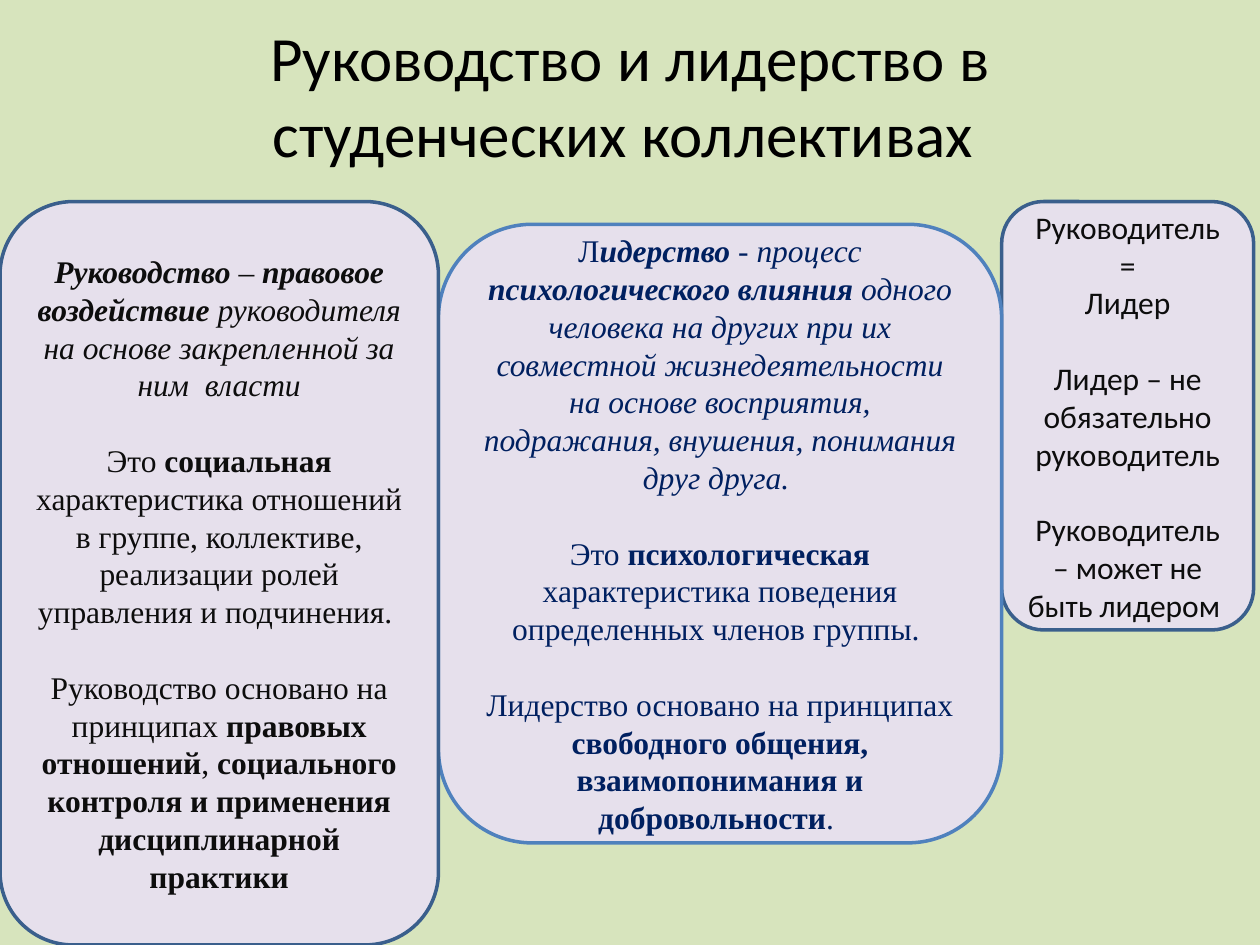
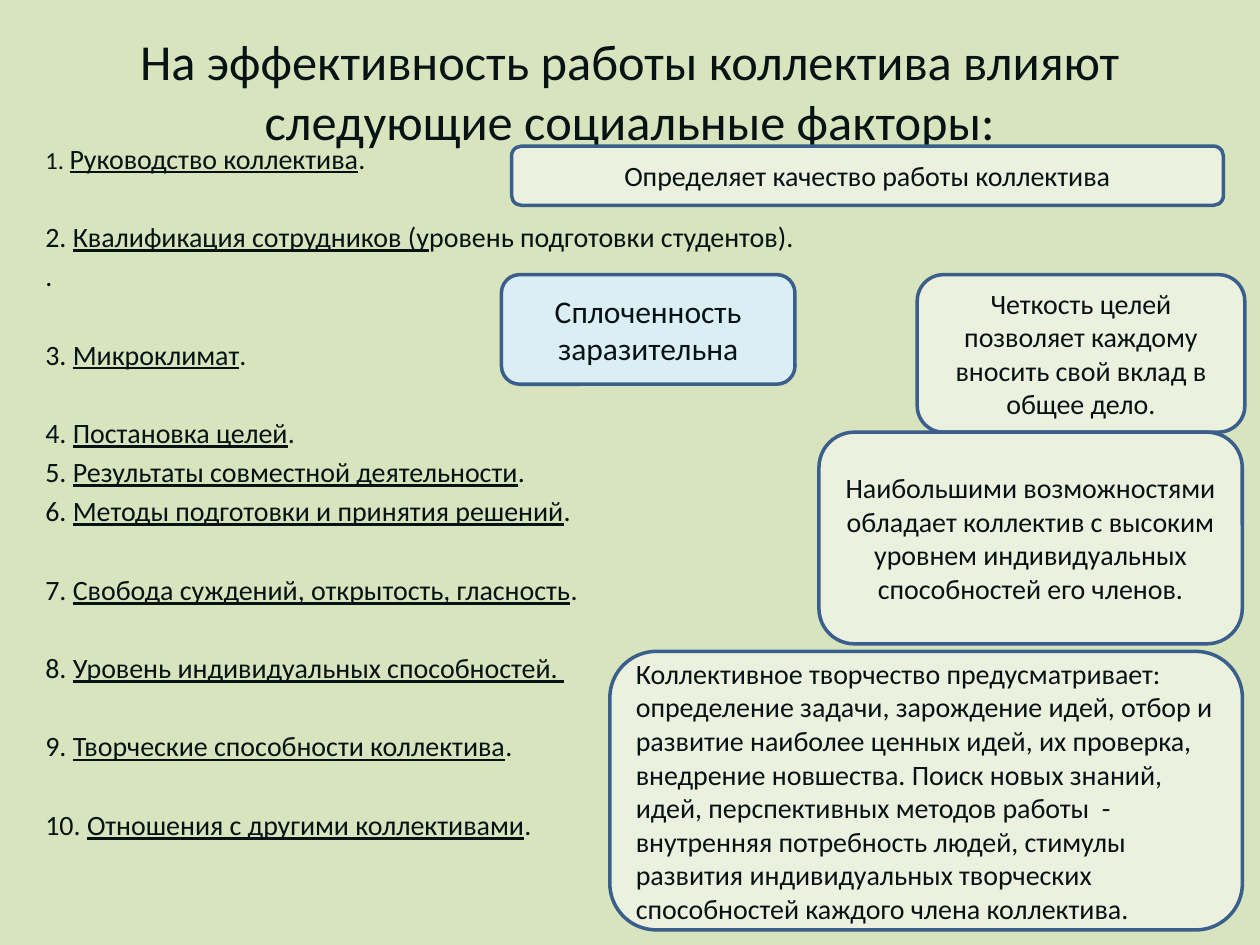
from collections import namedtuple

import pptx
import pptx.dml.color
import pptx.enum.shapes
import pptx.enum.text
import pptx.util

Box = namedtuple("Box", "left top width height")
Style = namedtuple("Style", "size color font align", defaults=("Calibri", "CENTER"))

COLUMNS, ROWS = 100, 75
SLIDE_WIDTH, SLIDE_HEIGHT = pptx.util.Inches(10), pptx.util.Inches(7.5)
LEADING = 1.2
BACKGROUND = "D7E4BD"
LILAC, IVORY, SKY = "E6E0EC", "EBF1DE", "DBEEF4"
OUTLINE, BRIGHT_OUTLINE = "3A5F8C", "4F81BD"
BLACK, CHARCOAL, NAVY, INK = "000000", "0D0D0D", "002060", "071215"
SERIF = "Times New Roman"

MANAGEMENT = [
    [("bi", "Руководство "), ("i", "– "), ("bi", "правовое воздействие"),
     ("i", " руководителя на основе закрепленной за ним  власти")],
    [("", "Это "), ("b", "социальная"),
     ("", " характеристика отношений в группе, коллективе, реализации ролей управления и подчинения. ")],
    [("", "Руководство основано на принципах "), ("b", "правовых отношений"), ("", ", "),
     ("b", "социального контроля и применения дисциплинарной практики")],
]
LEADERSHIP = [
    [("", "Л"), ("bi", "идерство "), ("i", "- процесс "), ("bi", "психологического влияния"),
     ("i", " одного человека на других при их совместной жизнедеятельности на основе восприятия, "
           "подражания, внушения, понимания друг друга. ")],
    [("", "Это "), ("b", "психологическая"),
     ("", " характеристика поведения определенных членов группы. ")],
    [("", "Лидерство основано на принципах "),
     ("b", "свободного общения, взаимопонимания и добровольности"), ("", ". ")],
]
COMPARISON = [
    [("", "Руководитель =")],
    [("", "Лидер")],
    [("", "Лидер – не обязательно руководитель")],
    [("", "Руководитель – может не быть лидером ")],
]
FACTORS = [
    ("Руководство коллектива", "."),
    ("Квалификация сотрудников (у", "ровень подготовки студентов)."),
    ("Микроклимат", "."),
    ("Постановка целей", "."),
    ("Результаты совместной деятельности", "."),
    ("Методы подготовки и принятия решений", "."),
    ("Свобода суждений, открытость, гласность", "."),
    ("Уровень индивидуальных способностей. ", " "),
    ("Творческие способности коллектива", "."),
    ("Отношения с другими коллективами", "."),
]
UNSPACED_FACTORS = {1, 5, 6}


def color(value):
    return pptx.dml.color.RGBColor.from_string(value)


def within(box, left, top, width, height):
    return Box(box.left + left, box.top + top, width, height)


def place(shape, box):
    shape.left = round(box.left * SLIDE_WIDTH / COLUMNS)
    shape.top = round(box.top * SLIDE_HEIGHT / ROWS)
    shape.width = round(box.width * SLIDE_WIDTH / COLUMNS)
    shape.height = round(box.height * SLIDE_HEIGHT / ROWS)


def write(shape, paragraphs, style, spaces, anchor="MIDDLE"):
    frame = shape.text_frame
    frame.word_wrap = True
    frame.auto_size = pptx.enum.text.MSO_AUTO_SIZE.NONE
    frame.vertical_anchor = getattr(pptx.enum.text.MSO_ANCHOR, anchor)
    for index, (runs, space) in enumerate(zip(paragraphs, spaces)):
        paragraph = frame.add_paragraph() if index else frame.paragraphs[0]
        paragraph.alignment = getattr(pptx.enum.text.PP_ALIGN, style.align)
        paragraph.line_spacing = pptx.util.Pt(style.size * LEADING)
        paragraph.space_before = pptx.util.Pt(space)
        for flags, text in runs:
            run = paragraph.add_run()
            run.text = text
            run.font.name = style.font
            run.font.size = pptx.util.Pt(style.size)
            run.font.color.rgb = color(style.color)
            run.font.bold = "b" in flags
            run.font.italic = "i" in flags
            run.font.underline = "u" in flags


def add_title(slide, box, text, style):
    place(slide.shapes.title, box)
    write(slide.shapes.title, [[("", text)]], style, [0])


def add_card(slide, box, paragraphs, style, fill, outline=OUTLINE, spaces=(0,)):
    kind = pptx.enum.shapes.MSO_SHAPE.ROUNDED_RECTANGLE
    card = slide.shapes.add_shape(kind, 0, 0, 0, 0)
    place(card, box)
    card.shadow.inherit = False
    card.fill.solid()
    card.fill.fore_color.rgb = color(fill)
    card.line.color.rgb = color(outline)
    card.line.width = pptx.util.Pt(2)
    write(card, paragraphs, style, spaces)


def add_definitions(slide, box):
    gap = 18 * LEADING
    add_card(slide, within(box, 79.5, 0, 20, 34), COMPARISON,
             Style(18, CHARCOAL), LILAC, spaces=(0, 0, gap, gap))
    add_card(slide, within(box, 34.8, 1.8, 44.7, 49.1), LEADERSHIP,
             Style(18, NAVY, SERIF), LILAC, BRIGHT_OUTLINE, (0, gap, gap))
    add_card(slide, within(box, 0, 0, 34.8, box.height), MANAGEMENT,
             Style(18, CHARCOAL, SERIF), LILAC, spaces=(0, gap, gap))


def add_factor_list(slide, box):
    style = Style(16, INK, align="LEFT")
    tight = 0.2 * style.size
    loose = 2 * tight + style.size * LEADING
    paragraphs, spaces = [], []
    for number, (factor, ending) in enumerate(FACTORS, 1):
        paragraphs.append([("", f"{number}. "), ("u", factor), ("", ending)])
        spaces.append(tight if number in UNSPACED_FACTORS else loose)
    paragraphs.insert(2, [("", ".")])
    spaces.insert(2, tight)
    body = slide.placeholders[1]
    place(body, box)
    write(body, paragraphs, style, spaces, "TOP")
    for paragraph in body.text_frame.paragraphs:
        properties = paragraph._p.get_or_add_pPr()
        properties.set("marL", "0")
        properties.set("indent", "0")
        bullet = properties.makeelement(pptx.oxml.ns.qn("a:buNone"), {})
        properties.append(bullet)
    body.text_frame.paragraphs[0].runs[0].font.size = pptx.util.Pt(14)


def add_comments(slide, box):
    comments = [
        ((0.8, 0, 56.5, 4.7), IVORY, Style(16, INK),
         "Определяет качество работы коллектива"),
        ((33, 10.2, 26, 12.5), IVORY, Style(16, INK),
         "Четкость целей позволяет каждому вносить свой вклад в общее дело."),
        ((25.2, 22.7, 33.6, 16.8), IVORY, Style(16, INK),
         "Наибольшими возможностями обладает коллектив с высоким уровнем "
         "индивидуальных способностей его членов."),
        ((8.6, 40.1, 50.2, 22.1), IVORY, Style(16, INK, align="LEFT"),
         "Коллективное творчество предусматривает: определение задачи, зарождение идей, "
         "отбор и развитие наиболее ценных идей, их проверка, внедрение новшества. "
         "Поиск новых знаний, идей, перспективных методов работы  - внутренняя потребность "
         "людей, стимулы  развития индивидуальных творческих способностей каждого члена "
         "коллектива."),
        ((0, 10.2, 23.3, 8.7), SKY, Style(18, INK), "Сплоченность заразительна"),
    ]
    for position, fill, style, text in comments:
        add_card(slide, within(box, *position), [[("", text)]], style, fill)


def build_leadership_slide(presentation):
    slide = presentation.slides.add_slide(presentation.slide_layouts[5])
    add_title(slide, Box(6.9, 4, 86.2, 7),
              "Руководство и лидерство в студенческих коллективах ", Style(36, BLACK))
    add_definitions(slide, Box(0, 16, 100, 59))


def build_factors_slide(presentation):
    slide = presentation.slides.add_slide(presentation.slide_layouts[1])
    add_title(slide, Box(5, 3, 90, 8.3),
              "На эффективность работы коллектива влияют следующие социальные факторы:",
              Style(28.8, INK))
    add_factor_list(slide, Box(2.6, 10.7, 73.2, 49.5))
    add_comments(slide, Box(39.8, 11.6, 58.8, 62.2))


def main():
    presentation = pptx.Presentation()
    presentation.slide_width, presentation.slide_height = SLIDE_WIDTH, SLIDE_HEIGHT
    background = presentation.slide_master.background.fill
    background.solid()
    background.fore_color.rgb = color(BACKGROUND)
    build_leadership_slide(presentation)
    build_factors_slide(presentation)
    presentation.save("out.pptx")


if __name__ == "__main__":
    main()
